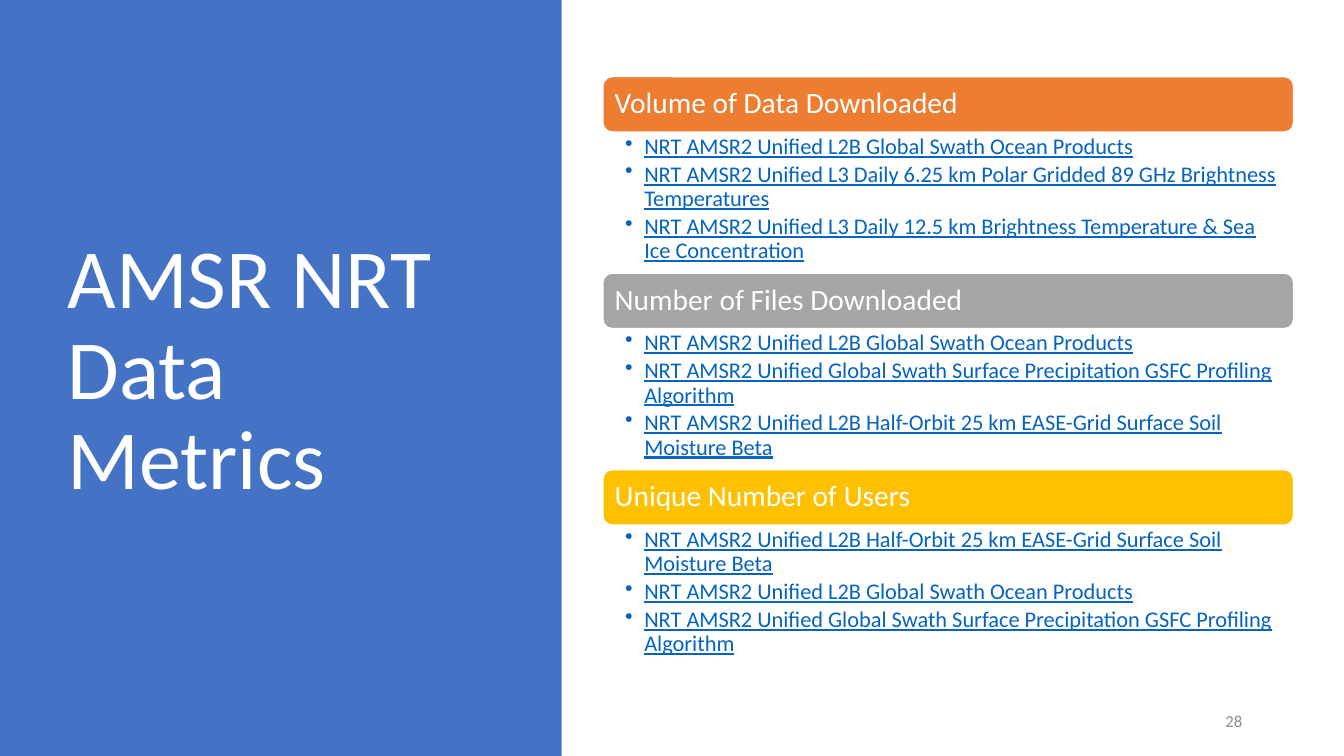
import pptx
import pptx.util
import pptx.dml.color
import pptx.enum.shapes
import pptx.enum.text
import pptx.oxml
import pptx.oxml.ns
from pptx.util import Inches

COLORS = {"panel": "4472C4", "orange": "ED7D31", "gray": "A5A5A5", "gold": "FFC000",
          "white": "FFFFFF", "link": "0563C1", "number": "8C8C8C"}
SHAPE = pptx.enum.shapes.MSO_SHAPE
ALIGN = pptx.enum.text.PP_ALIGN
ANCHOR = pptx.enum.text.MSO_ANCHOR

OCEAN = "NRT AMSR2 Unified L2B Global Swath Ocean Products"
PRECIPITATION = "NRT AMSR2 Unified Global Swath Surface Precipitation GSFC Profiling Algorithm"
SOIL = "NRT AMSR2 Unified L2B Half-Orbit 25 km EASE-Grid Surface Soil Moisture Beta"
POLAR = "NRT AMSR2 Unified L3 Daily 6.25 km Polar Gridded 89 GHz Brightness Temperatures"
SEA_ICE = ("NRT AMSR2 Unified L3 Daily 12.5 km Brightness Temperature"
           " & Sea Ice Concentration")
SECTIONS = [
    ("Volume of Data Downloaded", "orange", [OCEAN, POLAR, SEA_ICE]),
    ("Number of Files Downloaded", "gray", [OCEAN, PRECIPITATION, SOIL]),
    ("Unique Number of Users", "gold", [SOIL, OCEAN, PRECIPITATION]),
]
LEFT, TOP, WIDTH = 5.98, 0.76, 6.85
HEADER_H, LIST_H = 0.55, 1.4


def rgb(name):
    """Return the named colour."""
    return pptx.dml.color.RGBColor.from_string(COLORS[name])


def add_run(p, text, size, color, underline=None):
    """Add a formatted run to a paragraph."""
    r = p.add_run()
    r.text = text
    r.font.name = "Calibri"
    r.font.size = pptx.util.Pt(size)
    r.font.color.rgb = rgb(color)
    r.font.underline = underline


def set_frame(tf, anchor, left=0.1, top=0.05, right=0.1, bottom=0.05):
    """Set wrapping, anchor and insets of a text frame."""
    tf.word_wrap = True
    tf.auto_size = pptx.enum.text.MSO_AUTO_SIZE.NONE
    tf.vertical_anchor = anchor
    tf.margin_left, tf.margin_top = Inches(left), Inches(top)
    tf.margin_right, tf.margin_bottom = Inches(right), Inches(bottom)


def add_block(s, kind, x, y, w, h, fill):
    """Add a filled shape without outline or shadow."""
    sp = s.shapes.add_shape(kind, Inches(x), Inches(y), Inches(w), Inches(h))
    sp.shadow.inherit = False
    sp.fill.solid()
    sp.fill.fore_color.rgb = rgb(fill)
    sp.line.fill.background()
    return sp


def add_title(s, text):
    """Place the title over the coloured side panel."""
    panel = add_block(s, SHAPE.RECTANGLE, 0, 0, 5.57, 7.5, "panel")
    title = s.shapes.title
    title._element.addprevious(panel._element)
    title.left, title.top = Inches(0.57), Inches(0.68)
    title.width, title.height = Inches(4.16), Inches(6.02)
    set_frame(title.text_frame, ANCHOR.MIDDLE)
    p = title.text_frame.paragraphs[0]
    p.alignment = ALIGN.LEFT
    p.line_spacing = 0.9
    add_run(p, text, 60, "white")


def add_header(s, y, text, fill):
    """Add a rounded section header."""
    sp = add_block(s, SHAPE.ROUNDED_RECTANGLE, LEFT, y, WIDTH, HEADER_H, fill)
    sp.line.color.rgb = rgb("white")
    sp.line.width = pptx.util.Pt(1)
    set_frame(sp.text_frame, ANCHOR.MIDDLE, 0.09, 0.09, 0.09, 0.09)
    p = sp.text_frame.paragraphs[0]
    p.alignment = ALIGN.LEFT
    p.line_spacing = 0.9
    add_run(p, text, 21, "white")


def add_bullet(p):
    """Give a paragraph a hanging bullet."""
    pPr = p._p.get_or_add_pPr()
    pPr.set("marL", str(Inches(0.19)))
    pPr.set("indent", str(-Inches(0.19)))
    bullet = pptx.oxml.parse_xml(
        '<a:buChar %s char="•"/>' % pptx.oxml.ns.nsdecls("a"))
    pPr.append(bullet)


def add_list(s, y, items):
    """Add the bulleted data set names of a section."""
    box = s.shapes.add_textbox(Inches(LEFT), Inches(y), Inches(WIDTH), Inches(LIST_H))
    tf = box.text_frame
    set_frame(tf, ANCHOR.TOP, 0.22, 0.03, 0.16, 0.03)
    for i, item in enumerate(items):
        p = tf.add_paragraph() if i else tf.paragraphs[0]
        add_bullet(p)
        p.level = 1
        p.line_spacing = 0.9
        p.space_after = pptx.util.Pt(2.7)
        add_run(p, item, 16, "link", True)


def add_slide_number(s, text):
    """Add the slide number at the lower right."""
    box = s.shapes.add_textbox(Inches(9.42), Inches(6.95), Inches(3), Inches(0.4))
    set_frame(box.text_frame, ANCHOR.MIDDLE)
    p = box.text_frame.paragraphs[0]
    p.alignment = ALIGN.RIGHT
    p.space_after = pptx.util.Pt(6)
    add_run(p, text, 12, "number")


def main():
    """Build the slide and save it."""
    prs = pptx.Presentation()
    prs.slide_width, prs.slide_height = Inches(13.33), Inches(7.5)
    s = prs.slides.add_slide(prs.slide_layouts[5])
    add_title(s, "AMSR NRT Data Metrics")
    for i, (heading, fill, items) in enumerate(SECTIONS):
        y = TOP + i * (HEADER_H + LIST_H)
        add_header(s, y, heading, fill)
        add_list(s, y + HEADER_H, items)
    add_slide_number(s, "28")
    prs.save("out.pptx")


if __name__ == "__main__":
    main()
